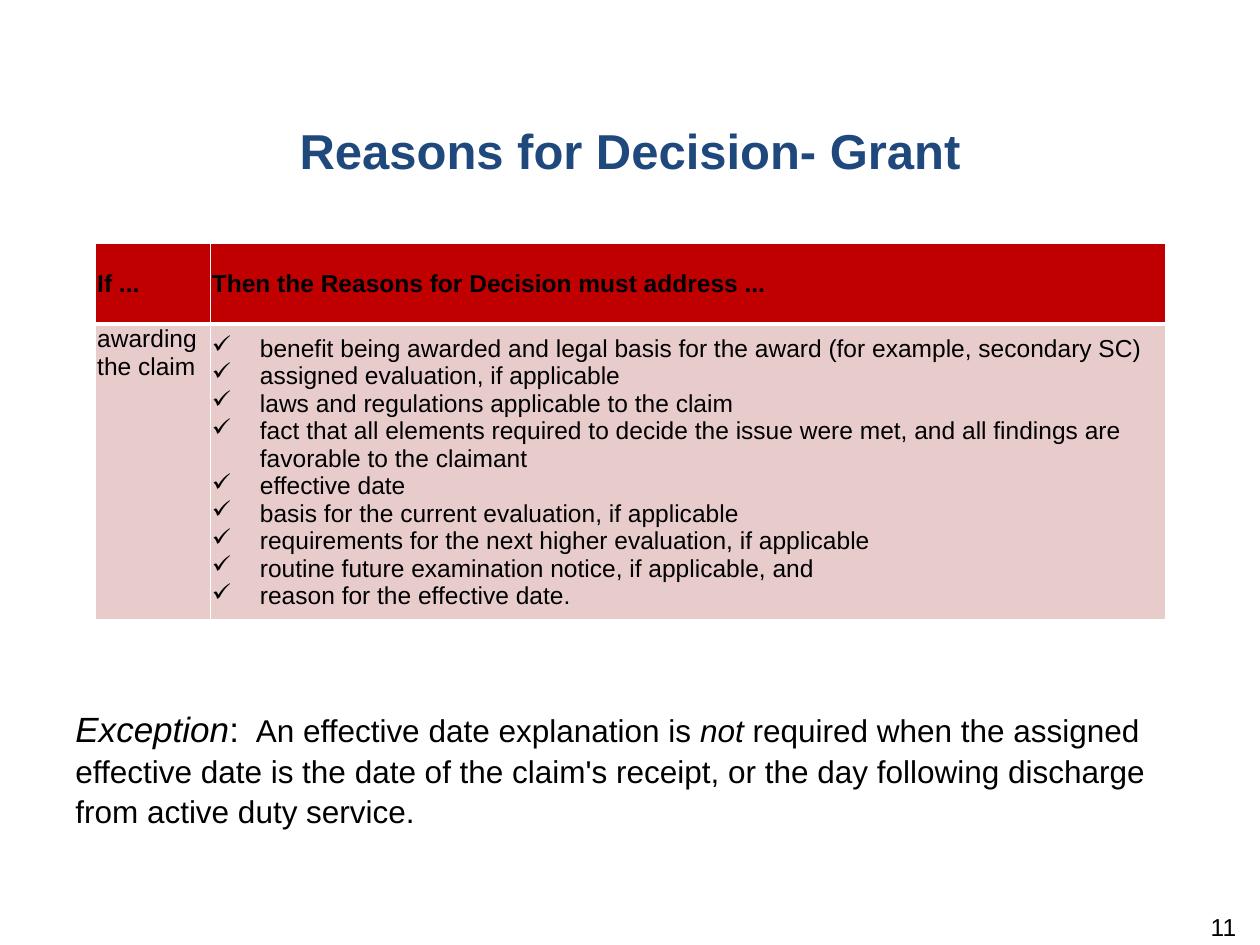
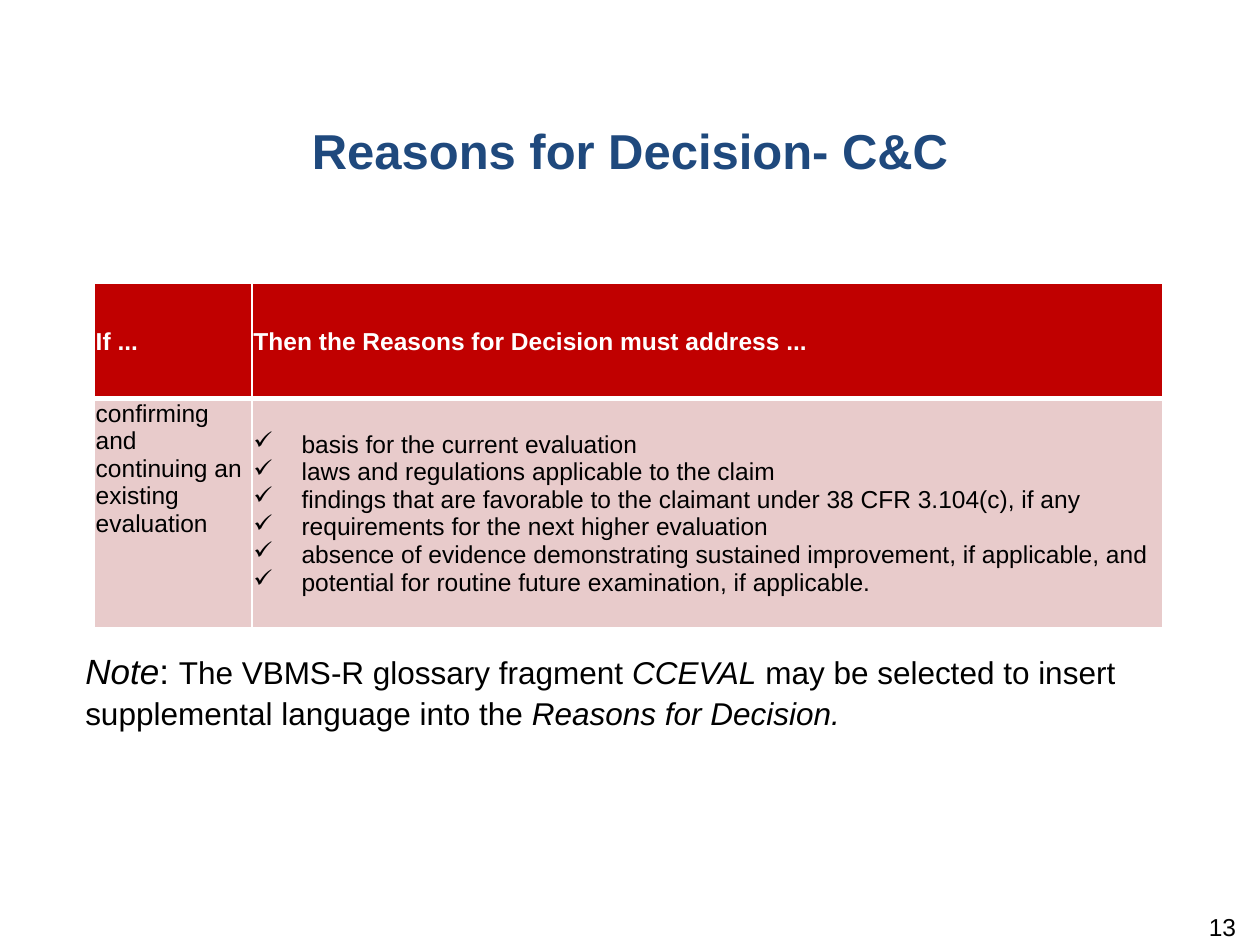
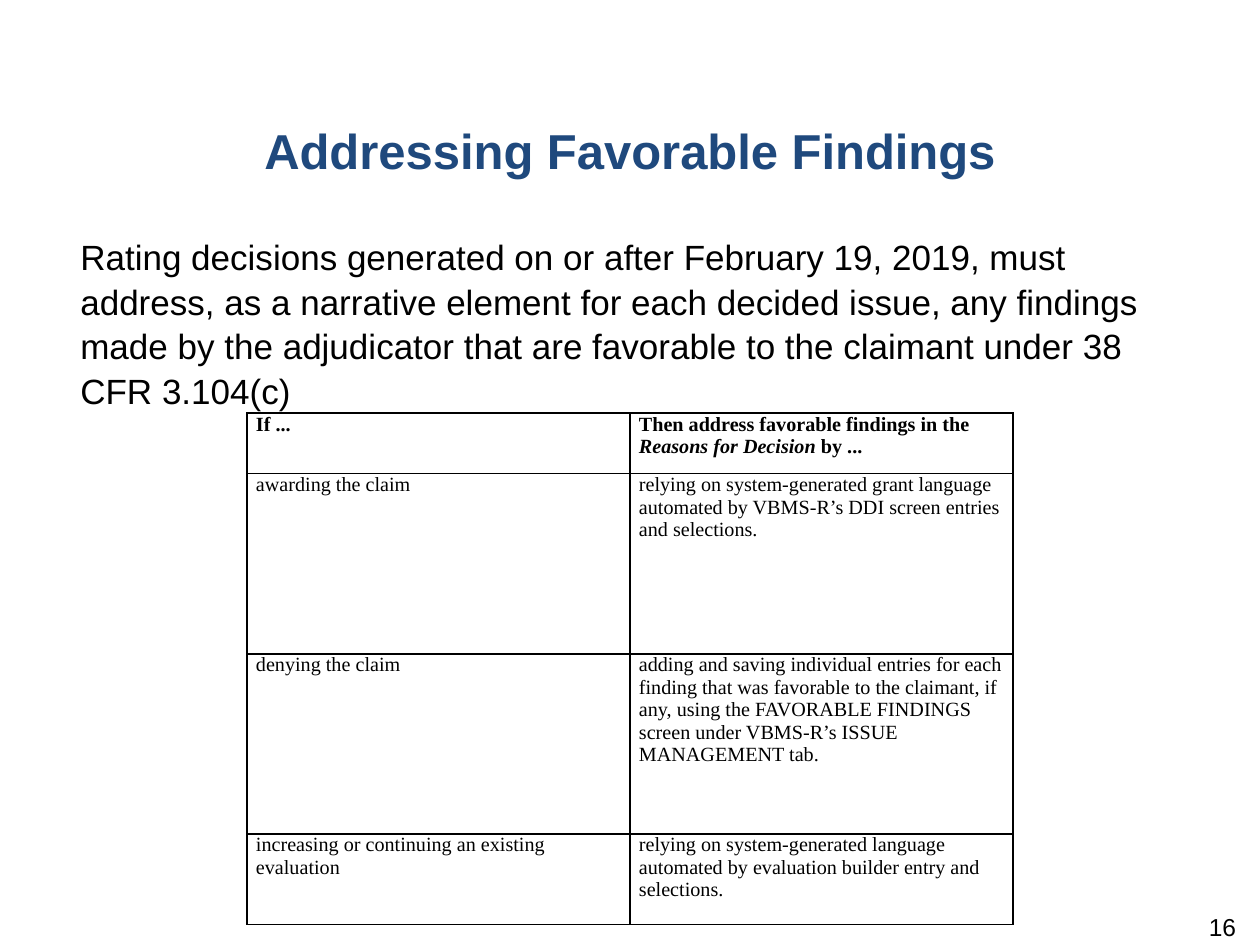
"""Build three slides on the reasons for decision in rating decisions."""
from dataclasses import dataclass

from lxml import etree
from pptx import Presentation
from pptx.dml.color import RGBColor
from pptx.enum.text import MSO_ANCHOR, PP_ALIGN
from pptx.oxml.ns import qn
from pptx.util import Cm, Pt

TOP, MIDDLE = MSO_ANCHOR.TOP, MSO_ANCHOR.MIDDLE
LEFT, CENTER, RIGHT = PP_ALIGN.LEFT, PP_ALIGN.CENTER, PP_ALIGN.RIGHT
TITLE_ONLY = 5


@dataclass(frozen=True)
class Theme:
    """Colours, fonts and type sizes shared by the slides."""
    navy: str = "1F497D"
    black: str = "000000"
    white: str = "FFFFFF"
    red: str = "C00000"
    pink: str = "E8CBCB"
    sans: str = "Arial"
    serif: str = "Times New Roman"
    title: float = 28
    lead: float = 20
    body: float = 18
    small: float = 14
    grid: float = 11.5
    spacing: float = 1.07
    after: float = 6


THEME = Theme()
TITLE_BOX = (0, 2.21, 25.4, 3.02)
NUMBER_BOX = (19.25, 18.34, 5.92, 1.02)
TEXT_INSETS = (0.25, 0.13, 0.25, 0.13)
NUMBER_INSETS = (0.25, 0, 0.25, 0.13)
CHECK_INDENT = 0.97

BANDED = {
    "font": THEME.sans, "size": THEME.small, "insets": (0.03, 0.03, 0.03, 0),
    "fills": (THEME.red, THEME.pink), "border": THEME.white, "rule": 3,
    "head_color": THEME.black, "head_anchor": MIDDLE,
}
GRID = {
    "font": THEME.serif, "size": THEME.grid, "insets": (0.18, 0, 0.18, 0),
    "fills": (None, None), "border": THEME.black, "rule": 1,
    "head_color": THEME.black, "head_anchor": TOP,
}

MUST_ADDRESS = ("If ...", "Then the Reasons for Decision must address ...")
SLIDES = [
    {
        "title": "Reasons for Decision- Grant",
        "number": "11",
        "lead": "*Exception*: ",
        "text": " An effective date explanation is *not* required when the assigned effective "
                "date is the date of the claim's receipt, or the day following discharge from "
                "active duty service.",
        "text_box": (1.27, 14.07, 22.86, 2.74),
        "style": BANDED,
        "corner": (1.93, 4.9),
        "columns": (2.31, 19.25),
        "heights": (1.63, 4.83),
        "rows": [
            MUST_ADDRESS,
            ("awarding the claim", [
                "benefit being awarded and legal basis for the award "
                "(for example, secondary SC)",
                "assigned evaluation, if applicable",
                "laws and regulations applicable to the claim",
                "fact that all elements required to decide the issue were met, and all "
                "findings are favorable to the claimant",
                "effective date",
                "basis for the current evaluation, if applicable",
                "requirements for the next higher evaluation, if applicable",
                "routine future examination notice, if applicable, and",
                "reason for the effective date.",
            ]),
        ],
    },
    {
        "title": "Reasons for Decision- C&C",
        "number": "13",
        "lead": "*Note*: ",
        "text": "The VBMS-R glossary fragment *CCEVAL* may be selected to insert "
                "supplemental language into the *Reasons for Decision.*",
        "text_box": (1.47, 12.9, 22.86, 1.88),
        "style": BANDED | {"head_color": THEME.white},
        "corner": (1.9, 5.72),
        "columns": (3.18, 18.36),
        "heights": (2.31, 4.62),
        "rows": [
            MUST_ADDRESS,
            ("confirming and continuing an existing evaluation", [
                "basis for the current evaluation",
                "laws and regulations applicable to the claim",
                "findings that are favorable to the claimant under 38 CFR 3.104(c), if any",
                "requirements for the next higher evaluation",
                "absence of evidence demonstrating sustained improvement, if applicable, and",
                "potential for routine future examination, if applicable.",
            ]),
        ],
    },
    {
        "title": "Addressing Favorable Findings",
        "number": "16",
        "lead": "Rating decisions generated on or after February 19, 2019, must address, as a "
                "narrative element for each decided issue, any findings made by the "
                "adjudicator that are favorable to the claimant under 38 CFR 3.104(c)",
        "text": "",
        "text_box": (1.37, 4.55, 22.66, 3.81),
        "style": GRID,
        "corner": (4.98, 8.33),
        "columns": (7.72, 7.72),
        "heights": (1.22, 3.63, 3.63, 1.83),
        "rows": [
            ("If ...",
             "Then address favorable findings in the *Reasons for Decision *by ..."),
            ("awarding the claim",
             "relying on system-generated grant language automated by VBMS-R’s DDI screen "
             "entries and selections."),
            ("denying the claim",
             "adding and saving individual entries for each finding that was favorable to "
             "the claimant, if any, using the FAVORABLE FINDINGS screen under VBMS-R’s "
             "ISSUE MANAGEMENT tab."),
            ("increasing or continuing an existing evaluation",
             "relying on system-generated language automated by evaluation builder entry "
             "and selections."),
        ],
    },
]


def apply(target, values):
    """Set each attribute named in a dict."""
    for name, value in values.items():
        setattr(target, name, value)


def margins(insets):
    """Name four insets as margin attributes."""
    sides = ("margin_left", "margin_top", "margin_right", "margin_bottom")
    return dict(zip(sides, map(Cm, insets)))


def write(paragraph, marked, size, color=THEME.black, font=THEME.sans, bold=False):
    """Add runs, with the words between asterisks in italics."""
    for index, words in enumerate(marked.split("*")):
        if words:
            run = paragraph.add_run()
            run.text = words
            apply(run.font, {"name": font, "size": Pt(size), "bold": bold,
                             "italic": index % 2 == 1})
            run.font.color.rgb = RGBColor.from_string(color)


def place(shape, box):
    """Move and size a shape in centimetres."""
    apply(shape, dict(zip(("left", "top", "width", "height"), map(Cm, box))))


def prepare(shape, box, insets=TEXT_INSETS, align=LEFT, after=THEME.after):
    """Format a text shape and return its first paragraph."""
    place(shape, box)
    frame = shape.text_frame
    apply(frame, {"word_wrap": True, "vertical_anchor": TOP} | margins(insets))
    paragraph = frame.paragraphs[0]
    apply(paragraph, {"alignment": align, "line_spacing": THEME.spacing,
                      "space_before": Pt(0), "space_after": Pt(after)})
    return paragraph


def add_check(paragraph):
    """Give a paragraph a check mark and a hanging indent."""
    properties = paragraph._p.get_or_add_pPr()
    properties.set("marL", str(Cm(CHECK_INDENT)))
    properties.set("indent", str(-Cm(CHECK_INDENT)))
    etree.SubElement(properties, qn("a:buChar"), char="✓")


def add_borders(cell, color, widths):
    """Draw the left, right, top and bottom borders of a cell."""
    properties = cell._tc.get_or_add_tcPr()
    for side, width in zip("LRTB", widths):
        line = etree.SubElement(properties, qn(f"a:ln{side}"), w=str(Pt(width)))
        fill = etree.SubElement(line, qn("a:solidFill"))
        etree.SubElement(fill, qn("a:srgbClr"), val=color)


def fill_cell(cell, content, is_head, style):
    """Format one table cell and write its text or checklist."""
    rule = style["rule"]
    add_borders(cell, style["border"], (1, 1, 1, rule) if is_head else (1, 1, rule, 1))
    color = style["fills"][0 if is_head else 1]
    if color:
        cell.fill.solid()
        cell.fill.fore_color.rgb = RGBColor.from_string(color)
    else:
        cell.fill.background()
    is_checklist = isinstance(content, list)
    anchor = style["head_anchor"] if is_head else MIDDLE if is_checklist else TOP
    apply(cell, {"vertical_anchor": anchor} | margins(style["insets"]))
    for index, item in enumerate(content if is_checklist else [content]):
        frame = cell.text_frame
        paragraph = frame.add_paragraph() if index else frame.paragraphs[0]
        if is_checklist:
            add_check(paragraph)
        write(paragraph, item, style["size"],
              style["head_color"] if is_head else THEME.black, style["font"], is_head)


def add_rules_table(slide, content):
    """Add the table of conditions and what each one requires."""
    rows, columns, heights = content["rows"], content["columns"], content["heights"]
    box = (*content["corner"], sum(columns), sum(heights))
    table = slide.shapes.add_table(len(rows), len(columns), *map(Cm, box)).table
    apply(table, {"first_row": False, "horz_banding": False})
    for column, width in zip(table.columns, columns):
        column.width = Cm(width)
    for row, height in zip(table.rows, heights):
        row.height = Cm(height)
    for row_index, row in enumerate(rows):
        for column_index, cell_content in enumerate(row):
            fill_cell(table.cell(row_index, column_index), cell_content,
                      row_index == 0, content["style"])


def add_slide(deck, content):
    """Add one slide with its title, text, number and table."""
    slide = deck.slides.add_slide(deck.slide_layouts[TITLE_ONLY])
    title = prepare(slide.shapes.title, TITLE_BOX, align=CENTER, after=0)
    write(title, content["title"], THEME.title, THEME.navy, bold=True)
    explanation = prepare(slide.shapes.add_textbox(0, 0, 0, 0), content["text_box"])
    write(explanation, content["lead"], THEME.lead)
    write(explanation, content["text"], THEME.body)
    number = prepare(slide.shapes.add_textbox(0, 0, 0, 0), NUMBER_BOX, NUMBER_INSETS, RIGHT)
    write(number, content["number"], THEME.small)
    add_rules_table(slide, content)


def main():
    """Build and save the deck."""
    deck = Presentation()
    apply(deck, {"slide_width": Cm(25.4), "slide_height": Cm(19.05)})
    for content in SLIDES:
        add_slide(deck, content)
    deck.save("out.pptx")


if __name__ == "__main__":
    main()
